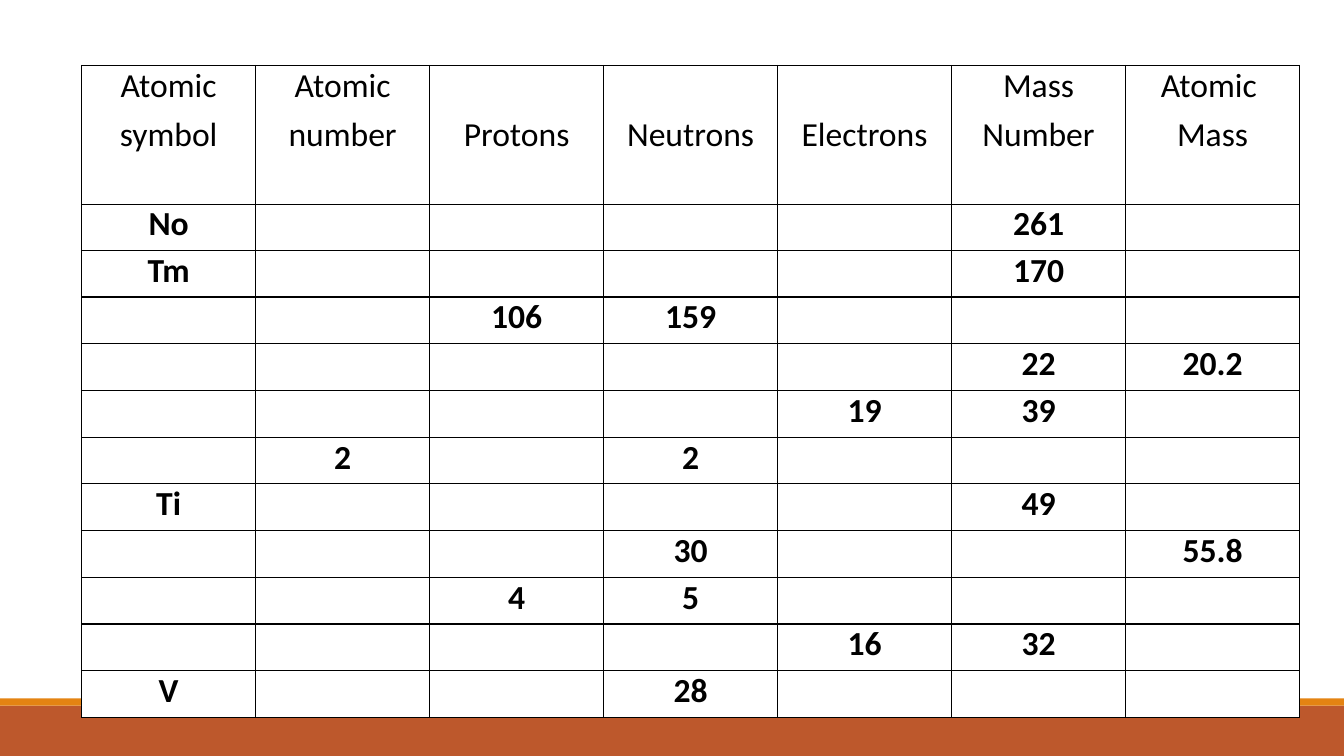
"""Build a slide with an atomic structure practice table."""
import lxml.etree
import pptx
import pptx.dml.color
import pptx.enum.shapes
import pptx.enum.text
import pptx.oxml.ns
import pptx.util

Inches = pptx.util.Inches
WHITE = pptx.dml.color.RGBColor(0xFF, 0xFF, 0xFF)
BLACK = pptx.dml.color.RGBColor(0x00, 0x00, 0x00)
RUST = pptx.dml.color.RGBColor(0xBD, 0x58, 0x2C)
ORANGE = pptx.dml.color.RGBColor(0xE4, 0x83, 0x12)

SLIDE_WIDTH = 13.33
TABLE_LEFT = 0.81
TABLE_WIDTH = 12.08
HEADINGS = [
    ["Atomic", "symbol"], ["Atomic", "number"], ["Protons"], ["Neutrons"],
    ["Electrons"], ["Mass", "Number"], ["Atomic ", "Mass"],
]
ATOMS = [
    ["No", "", "", "", "", "261", ""],
    ["Tm", "", "", "", "", "170", ""],
    ["", "", "106", "159", "", "", ""],
    ["", "", "", "", "", "22", "20.2"],
    ["", "", "", "", "19", "39", ""],
    ["", "2", "", "2", "", "", ""],
    ["Ti", "", "", "", "", "49", ""],
    ["", "", "", "30", "", "", "55.8"],
    ["", "", "4", "5", "", "", ""],
    ["", "", "", "", "16", "32", ""],
    ["V", "", "", "28", "", "", ""],
]


def add_band(slide, top, height, color):
    """Add a full-width coloured band."""
    band = slide.shapes.add_shape(
        pptx.enum.shapes.MSO_SHAPE.RECTANGLE,
        Inches(0), Inches(top), Inches(SLIDE_WIDTH), Inches(height))
    band.shadow.inherit = False
    band.fill.solid()
    band.fill.fore_color.rgb = color
    band.line.fill.background()


def set_borders(cell):
    """Draw a thin black line on all four sides of a cell."""
    properties = cell._tc.get_or_add_tcPr()
    for side in ("a:lnL", "a:lnR", "a:lnT", "a:lnB"):
        line = lxml.etree.SubElement(
            properties, pptx.oxml.ns.qn(side), w=str(pptx.util.Pt(1)))
        fill = lxml.etree.SubElement(line, pptx.oxml.ns.qn("a:solidFill"))
        lxml.etree.SubElement(fill, pptx.oxml.ns.qn("a:srgbClr"), val=str(BLACK))


def format_cell(cell, lines, bold):
    """Fill a cell and write its centred lines of text."""
    set_borders(cell)
    cell.fill.solid()
    cell.fill.fore_color.rgb = WHITE
    cell.margin_left = cell.margin_right = Inches(0.04)
    cell.margin_top = cell.margin_bottom = Inches(0)
    for index, text in enumerate(lines):
        frame = cell.text_frame
        paragraph = frame.add_paragraph() if index else frame.paragraphs[0]
        paragraph.alignment = pptx.enum.text.PP_ALIGN.CENTER
        paragraph.space_after = pptx.util.Pt(6)
        run = paragraph.add_run()
        run.text = text
        run.font.name = "Calibri"
        run.font.size = pptx.util.Pt(24)
        run.font.bold = bold
        run.font.color.rgb = BLACK


def add_grid(slide, top, height, rows, bold):
    """Add a table of equal rows and columns, and return it."""
    table = slide.shapes.add_table(
        len(rows), len(HEADINGS), Inches(TABLE_LEFT), Inches(top),
        Inches(TABLE_WIDTH), Inches(height)).table
    table.first_row = False
    table.horz_banding = False
    for row_index, row in enumerate(rows):
        for column_index, lines in enumerate(row):
            format_cell(table.cell(row_index, column_index), lines, bold)
    return table


def main():
    """Build and save the slide."""
    presentation = pptx.Presentation()
    presentation.slide_width = Inches(SLIDE_WIDTH)
    presentation.slide_height = Inches(7.5)
    slide = presentation.slides.add_slide(presentation.slide_layouts[6])
    add_band(slide, 7, 0.5, RUST)
    add_band(slide, 6.93, 0.07, ORANGE)
    atom_rows = [[[text] if text else [] for text in row] for row in ATOMS]
    add_grid(slide, 2.02, 5.1, atom_rows, True)
    heading_table = add_grid(slide, 0.65, 1.38, [HEADINGS], False)
    for cell, lines in zip(heading_table.iter_cells(), HEADINGS):
        if len(lines) == 1:
            cell.vertical_anchor = pptx.enum.text.MSO_ANCHOR.MIDDLE
    presentation.save("out.pptx")


if __name__ == "__main__":
    main()
